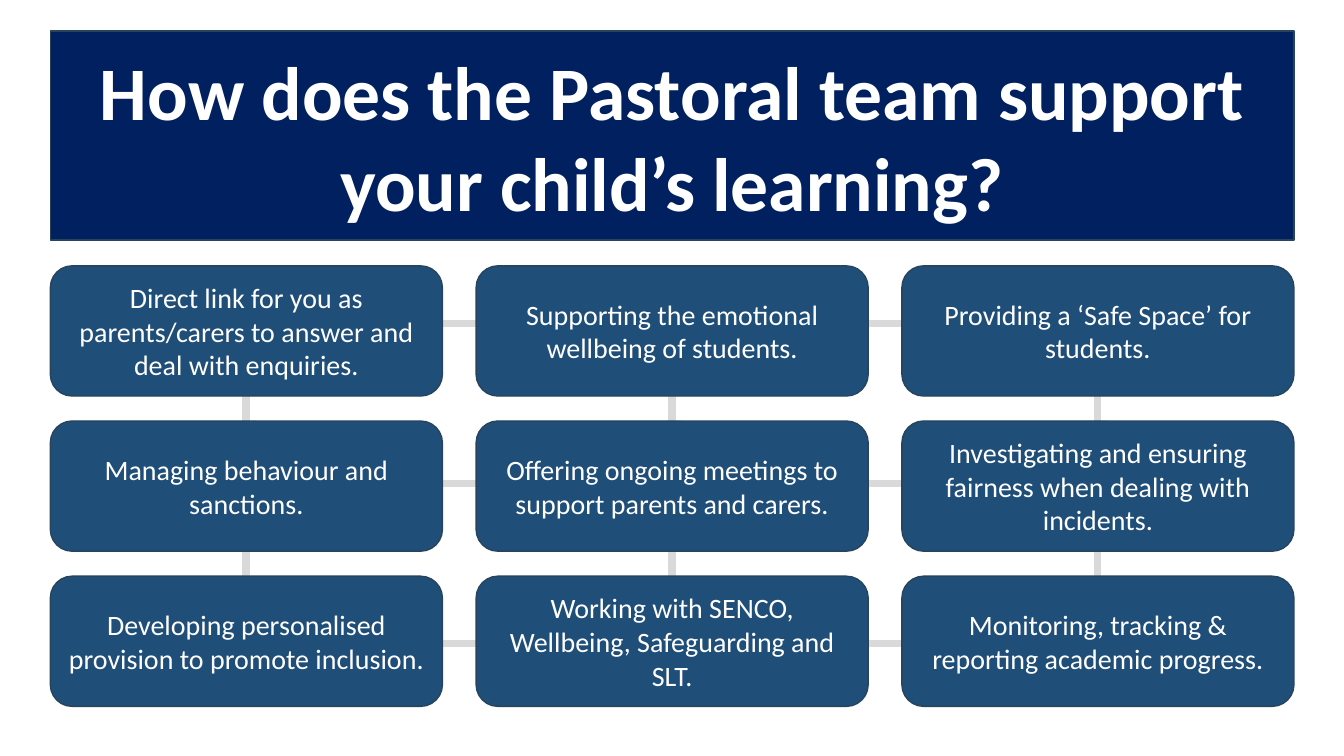
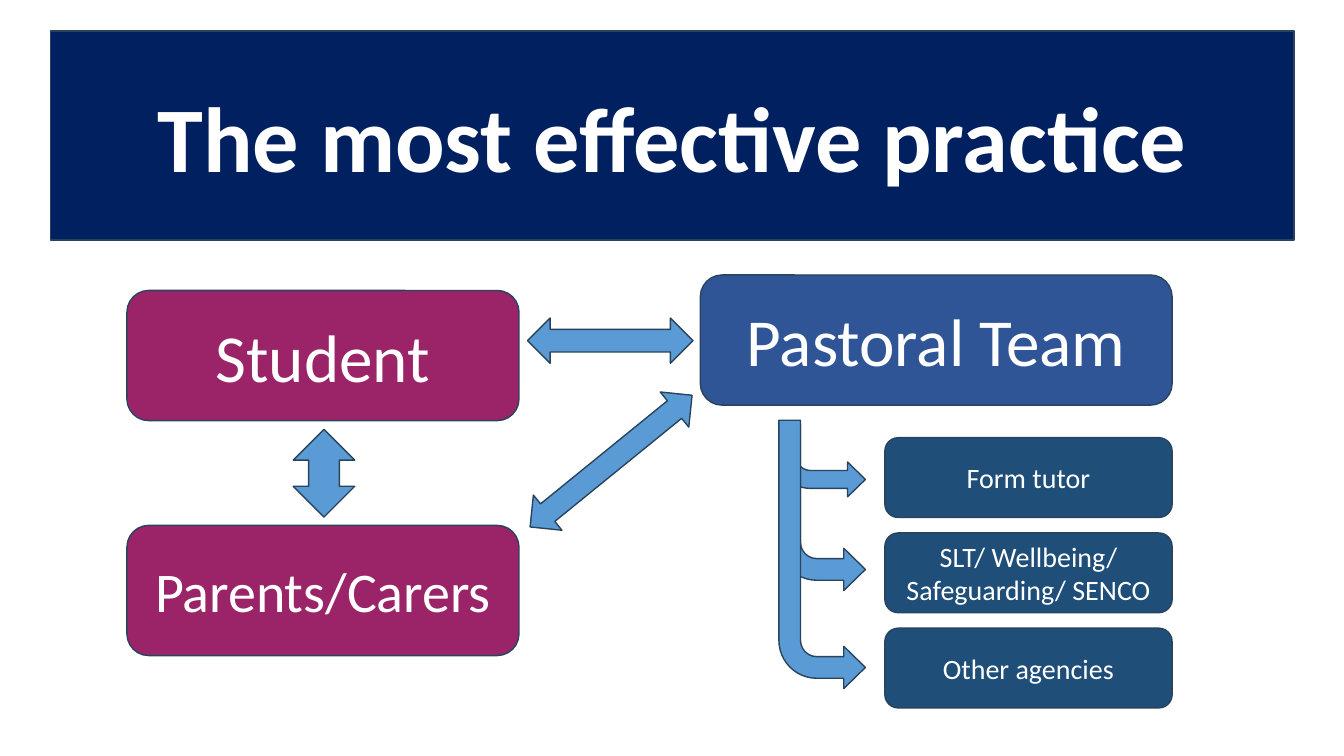
"""Build two slides on how a school pastoral team supports learning."""
import pptx
import pptx.dml.color
import pptx.enum.shapes
import pptx.enum.text
import pptx.oxml
import pptx.oxml.ns
import pptx.util

Cm = pptx.util.Cm
Pt = pptx.util.Pt
RGBColor = pptx.dml.color.RGBColor
SHAPE = pptx.enum.shapes.MSO_SHAPE

FONT = "Calibri"
WHITE = RGBColor(0xFF, 0xFF, 0xFF)
NAVY = RGBColor(0x00, 0x20, 0x60)
TEAL = RGBColor(0x1F, 0x4E, 0x79)
BLUE = RGBColor(0x2F, 0x55, 0x97)
PLUM = RGBColor(0x9B, 0x24, 0x69)
SKY = RGBColor(0x5B, 0x9B, 0xD5)
OUTLINE = RGBColor(0x28, 0x44, 0x5D)
GRID = RGBColor(0xD9, 0xD9, 0xD9)

MARGIN, BANNER_TOP, BANNER_W, BANNER_H = 1.27, 0.78, 31.34, 5.27
BOX_W, BOX_H = 9.88, 3.28
COL_STEP, ROW_STEP, ROWS_TOP = 10.73, 3.91, 6.7
GRID_LEFT, GRID_TOP, GRID_ROW, GRID_PT = 6.2, 8.15, 4.03, 6

SUPPORT_TITLE = "How does the Pastoral team support your child’s learning?"
SUPPORT = [
    ["Direct link for you as parents/carers to answer and deal with enquiries.",
     "Supporting the emotional wellbeing of students.",
     "Providing a ‘Safe Space’ for students."],
    ["Managing behaviour and sanctions.",
     "Offering ongoing meetings to support parents and carers.",
     "Investigating and ensuring fairness when dealing with incidents."],
    ["Developing personalised provision to promote inclusion.",
     "Working with SENCO, Wellbeing, Safeguarding and SLT.",
     "Monitoring, tracking & reporting academic progress."],
]

PRACTICE_TITLE = "The most effective practice"
PARTNERS = [
    ("Student", 48, PLUM, (3.2, 7.32, BOX_W, BOX_H)),
    ("Parents/Carers", 40, PLUM, (3.2, 13.24, BOX_W, BOX_H)),
    ("Pastoral Team", 48, BLUE, (17.65, 6.93, 11.89, BOX_H)),
]
TEAM = ["Form tutor", "SLT/ Wellbeing/ Safeguarding/ SENCO", "Other agencies"]
TEAM_LEFT, TEAM_TOP, TEAM_W, TEAM_H, TEAM_STEP = 22.3, 11.03, 7.24, 2.01, 2.4
TWO_WAY = [
    ((7.39, 10.82, 1.55, 2.21), 0),
    ((14.81, 6.5, 1.14, 4.17), 90),
    ((14.83, 8.99, 1.14, 5.26), 50.9),
]
BRANCH_LEFT, BRANCH_W = 19.63, 2.18
BRANCHES = [(10.72, 1.8), (10.69, 4.19), (10.59, 6.76)]
BRANCH_ADJ = [0.25, 0.244, 0.25, 0.438]


def paint(sp, fill):
    sp.shadow.inherit = False
    sp.fill.solid()
    sp.fill.fore_color.rgb = fill
    sp.line.color.rgb = OUTLINE
    sp.line.width = Pt(1)


def write(sp, text, size, bold=False):
    tf = sp.text_frame
    tf.text = text
    tf.word_wrap = True
    tf.auto_size = pptx.enum.text.MSO_AUTO_SIZE.NONE
    tf.vertical_anchor = pptx.enum.text.MSO_ANCHOR.MIDDLE
    p = tf.paragraphs[0]
    p.alignment = pptx.enum.text.PP_ALIGN.CENTER
    font = p.runs[0].font
    font.name, font.size, font.bold = FONT, Pt(size), bold
    font.color.rgb = WHITE


def add_shape(s, kind, at, fill):
    sp = s.shapes.add_shape(kind, *map(Cm, at))
    paint(sp, fill)
    return sp


def add_box(s, text, size, fill, at):
    write(add_shape(s, SHAPE.ROUNDED_RECTANGLE, at, fill), text, size)


def add_titled_slide(prs, text, size):
    s = prs.slides.add_slide(prs.slide_layouts[5])
    sp = s.shapes.title
    sp.left, sp.top = Cm(MARGIN), Cm(BANNER_TOP)
    sp.width, sp.height = Cm(BANNER_W), Cm(BANNER_H)
    sp._element.spPr.insert(1, pptx.oxml.parse_xml(
        f'<a:prstGeom {pptx.oxml.ns.nsdecls("a")} prst="roundRect"><a:avLst/></a:prstGeom>'))
    paint(sp, NAVY)
    write(sp, text, size, bold=True)
    return s


def add_grid(s):
    table = s.shapes.add_table(2, 2, Cm(GRID_LEFT), Cm(GRID_TOP),
                               Cm(2 * COL_STEP), Cm(2 * GRID_ROW)).table
    table.first_row = table.horz_banding = False
    for col in table.columns:
        col.width = Cm(COL_STEP)
    for row in table.rows:
        row.height = Cm(GRID_ROW)
    for cell in table.iter_cells():
        cell.fill.background()
        tcPr = cell._tc.get_or_add_tcPr()
        for i, side in enumerate("LRTB"):
            tcPr.insert(i, pptx.oxml.parse_xml(
                f'<a:ln{side} {pptx.oxml.ns.nsdecls("a")} w="{Pt(GRID_PT)}">'
                f'<a:solidFill><a:srgbClr val="{GRID}"/></a:solidFill></a:ln{side}>'))


def build_support(prs):
    s = add_titled_slide(prs, SUPPORT_TITLE, 54)
    add_grid(s)
    for i, row in enumerate(SUPPORT):
        for j, text in enumerate(row):
            at = (MARGIN + j * COL_STEP, ROWS_TOP + i * ROW_STEP, BOX_W, BOX_H)
            add_box(s, text, 20, TEAL, at)


def build_practice(prs):
    s = add_titled_slide(prs, PRACTICE_TITLE, 66)
    for partner in PARTNERS:
        add_box(s, *partner)
    for i, text in enumerate(TEAM):
        at = (TEAM_LEFT, TEAM_TOP + i * TEAM_STEP, TEAM_W, TEAM_H)
        add_box(s, text, 20, TEAL, at)
    for at, angle in TWO_WAY:
        add_shape(s, SHAPE.UP_DOWN_ARROW, at, SKY).rotation = angle
    for top, height in BRANCHES:
        sp = add_shape(s, SHAPE.BENT_ARROW, (BRANCH_LEFT, top, BRANCH_W, height), SKY)
        sp.rotation = 180
        sp._element.spPr.get_or_add_xfrm().set("flipH", "1")
        for i, value in enumerate(BRANCH_ADJ):
            sp.adjustments[i] = value


def main():
    prs = pptx.Presentation()
    prs.slide_width, prs.slide_height = Cm(33.87), Cm(19.05)
    build_support(prs)
    build_practice(prs)
    prs.save("out.pptx")


if __name__ == "__main__":
    main()
